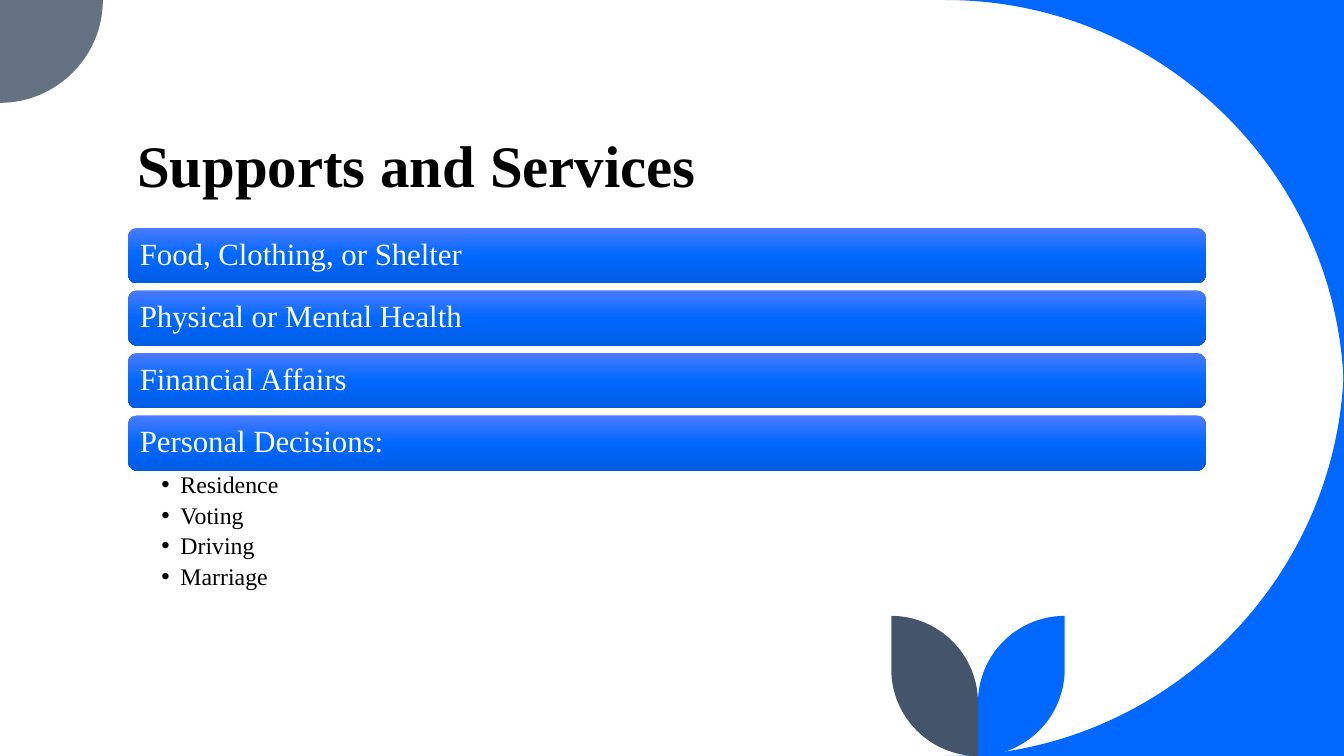
from copy import deepcopy
from dataclasses import dataclass
from math import cos, radians, sin

from lxml import etree
from pptx import Presentation
from pptx.dml.color import RGBColor
from pptx.enum import shapes, text
from pptx.oxml import ns
from pptx.util import Inches, Pt

TITLE = "Supports and Services"
TOPICS = [
    "Food, Clothing, or Shelter",
    "Physical or Mental Health",
    "Financial Affairs",
    "Personal Decisions:",
]
DECISIONS = ["Residence", "Voting", "Driving", "Marriage"]


@dataclass(frozen=True)
class Theme:
    font: str = "Times New Roman"
    title_size: int = 42
    topic_size: int = 22
    decision_size: int = 17
    ink: str = "000000"
    light: str = "FFFFFF"
    blue: str = "0068FF"
    gray: str = "637183"
    slate: str = "44546A"
    bar_stops: tuple = ((0, "4B7BFF"), (0.5, "0068FF"), (1, "005CE3"))


THEME = Theme()
WIDTH, HEIGHT = 13.33, 7.5
LEFT, CONTENT_WIDTH = 1.27, 10.69
BAR_TOP, BAR_HEIGHT, BAR_PITCH = 2.26, 0.55, 0.62
SWEEP, CORNER = 3.95, 1.02
STEM, LEAF_TOP, LEAF_RADIUS = 9.7, 6.11, 0.86
ARC_HANDLE = 0.55  # Bezier handle length of a quarter circle, in radii


def quarter(x, y, radius, start):
    """Bezier points of a clockwise quarter circle round (x, y), from start degrees."""
    c, s = round(cos(radians(start))), round(sin(radians(start)))
    k = ARC_HANDLE
    unit = [(c, s), (c - k * s, s + k * c), (k * c - s, k * s + c), (-s, c)]
    return [(x + radius * dx, y + radius * dy) for dx, dy in unit]


def leaf(side):
    """Two arcs of a leaf on the right (1) or left (-1) of the stem."""
    arcs = quarter(0, HEIGHT - LEAF_RADIUS, LEAF_RADIUS, 0)
    arcs += quarter(LEAF_RADIUS, LEAF_TOP + LEAF_RADIUS, LEAF_RADIUS, 180)
    return [(STEM + side * x, y) for x, y in arcs]


def add_outline(slide, points, color):
    """Draw each full group of four points as an arc, and the rest as corners."""
    start, *rest = [(Inches(x), Inches(y)) for x, y in points]
    builder = slide.shapes.build_freeform(*start)
    builder.add_line_segments(rest, close=True)
    outline = builder.convert_to_shape()
    segments = outline._element.findall(".//" + ns.qn("a:lnTo"))
    for first in range(0, len(points) // 4 * 4, 4):
        arc = segments[first:first + 3]
        curve = etree.Element(ns.qn("a:cubicBezTo"))
        arc[0].addprevious(curve)
        for segment in arc:
            curve.append(segment[0])
            segment.getparent().remove(segment)
    outline.shadow.inherit = False
    outline.fill.solid()
    outline.fill.fore_color.rgb = RGBColor.from_string(color)
    outline.line.fill.background()


def place(shape, left, top, width, height):
    shape.left, shape.top = Inches(left), Inches(top)
    shape.width, shape.height = Inches(width), Inches(height)


def set_frame(frame, anchor, left, top, right, bottom):
    frame.word_wrap = True
    frame.auto_size = text.MSO_AUTO_SIZE.NONE
    frame.vertical_anchor = anchor
    frame.margin_left, frame.margin_top = Inches(left), Inches(top)
    frame.margin_right, frame.margin_bottom = Inches(right), Inches(bottom)


def format_paragraph(paragraph, size, color, spacing, after=0, bold=False):
    paragraph.alignment = text.PP_ALIGN.LEFT
    paragraph.line_spacing = spacing
    paragraph.space_before, paragraph.space_after = Pt(0), Pt(after)
    for run in paragraph.runs:
        run.font.name, run.font.size, run.font.bold = THEME.font, Pt(size), bold
        run.font.color.rgb = RGBColor.from_string(color)


def add_bullet(paragraph, indent):
    props = paragraph._p.get_or_add_pPr()
    props.set("marL", str(Inches(indent)))
    props.set("indent", str(-Inches(indent)))
    etree.SubElement(props, ns.qn("a:buChar")).set("char", "•")


def add_topic_bar(slide, topic, top):
    bar = slide.shapes.add_shape(
        shapes.MSO_SHAPE.ROUNDED_RECTANGLE,
        Inches(LEFT), Inches(top), Inches(CONTENT_WIDTH), Inches(BAR_HEIGHT))
    bar.shadow.inherit = False
    bar.line.fill.background()
    bar.fill.gradient()
    bar.fill.gradient_angle = 270
    stop_list = bar._element.spPr.find(".//" + ns.qn("a:gsLst"))
    stop_list.append(deepcopy(stop_list[-1]))
    for stop, (position, color) in zip(bar.fill.gradient_stops, THEME.bar_stops):
        stop.position = position
        stop.color.rgb = RGBColor.from_string(color)
    set_frame(bar.text_frame, text.MSO_ANCHOR.MIDDLE, 0.09, 0.09, 0.09, 0.09)
    bar.text_frame.text = topic
    format_paragraph(bar.text_frame.paragraphs[0], THEME.topic_size, THEME.light, 0.9)


def main():
    deck = Presentation()
    deck.slide_width, deck.slide_height = Inches(WIDTH), Inches(HEIGHT)
    slide = deck.slides.add_slide(deck.slide_layouts[1])

    sweep_x = WIDTH - SWEEP
    for points, color in [
        (quarter(sweep_x, SWEEP, SWEEP, 270) + [(WIDTH, 0)], THEME.blue),
        (quarter(sweep_x, HEIGHT - SWEEP, SWEEP, 0) + [(WIDTH, HEIGHT)], THEME.blue),
        (quarter(0, 0, CORNER, 0) + [(0, 0)], THEME.gray),
        (leaf(1), THEME.blue),
        (leaf(-1), THEME.slate),
    ]:
        add_outline(slide, points, color)

    title = slide.shapes.title
    place(title, LEFT, 0.11, CONTENT_WIDTH, 1.91)
    set_frame(title.text_frame, text.MSO_ANCHOR.BOTTOM, 0.09, 0.05, 0.1, 0.05)
    title.text_frame.text = TITLE
    format_paragraph(title.text_frame.paragraphs[0], THEME.title_size, THEME.ink,
                     0.8, bold=True)

    for row, topic in enumerate(TOPICS):
        add_topic_bar(slide, topic, BAR_TOP + row * BAR_PITCH)

    decisions = slide.placeholders[1]
    place(decisions, LEFT, 4.66, CONTENT_WIDTH, 1.17)
    set_frame(decisions.text_frame, text.MSO_ANCHOR.TOP, 0.33, 0.03, 0.17, 0.03)
    decisions.text_frame.text = "\n".join(DECISIONS)
    for paragraph in decisions.text_frame.paragraphs:
        format_paragraph(paragraph, THEME.decision_size, THEME.ink, 0.9, after=3.6)
        add_bullet(paragraph, 0.19)

    deck.save("out.pptx")


if __name__ == "__main__":
    main()
